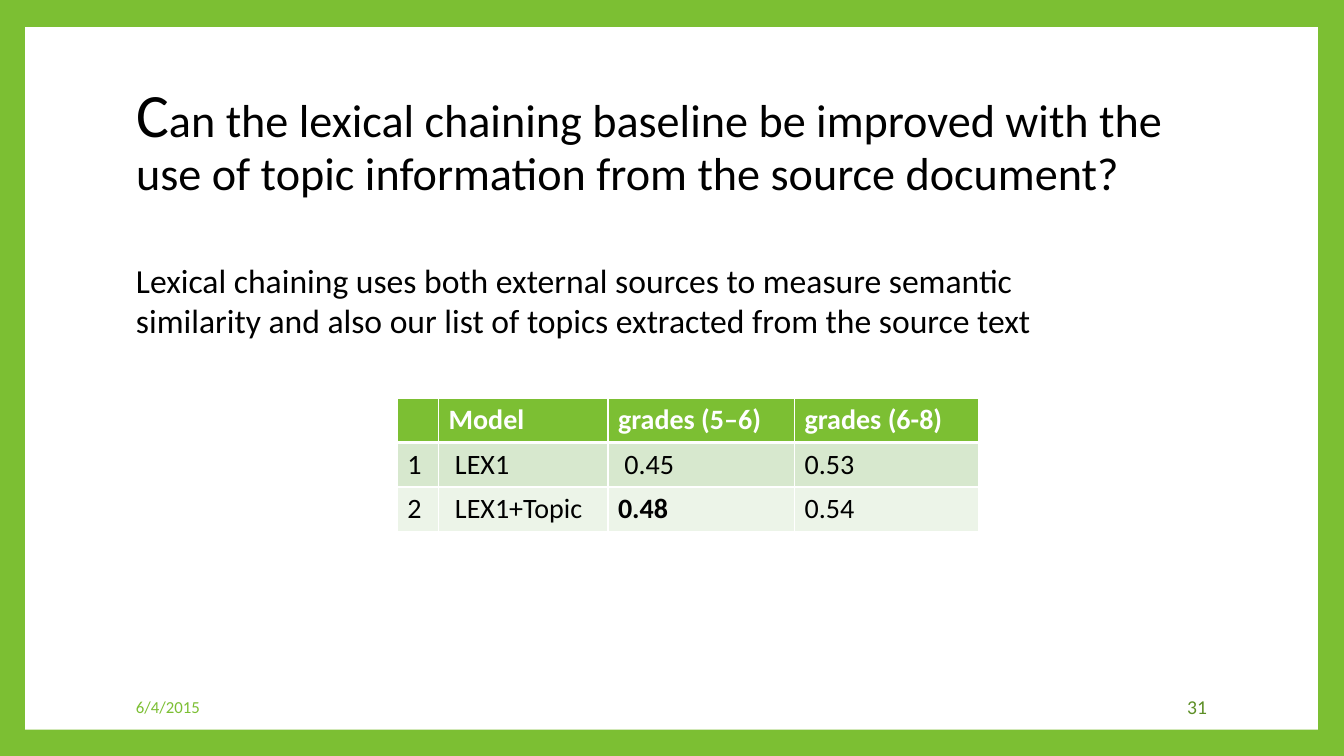
from lxml import etree
from pptx import Presentation
from pptx import util as u
from pptx.dml.color import RGBColor
from pptx.enum import shapes, text
from pptx.oxml import ns

PX = u.Inches(1) // 100

GREEN = RGBColor(0x7C, 0xBF, 0x33)
DARK_GREEN = RGBColor(0x5D, 0x8F, 0x26)
WHITE = RGBColor(0xFF, 0xFF, 0xFF)
BLACK = RGBColor(0, 0, 0)
ROW_FILLS = [GREEN, RGBColor(0xD7, 0xE8, 0xCE), RGBColor(0xEC, 0xF4, 0xE8)]

SCORES = [
    ["", "Model", "grades (5–6)", "grades (6-8)"],
    ["1", " LEX1", " 0.45", "0.53"],
    ["2", " LEX1+Topic", "0.48", "0.54"],
]
BEST_SCORE = "0.48"
COLUMN_WIDTHS = [41, 168, 185, 183]
ROW_HEIGHT = 43


def px(*lengths):
    return [length * PX for length in lengths]


def write(paragraph, words, size, color=BLACK, bold=False, align=text.PP_ALIGN.LEFT):
    paragraph.alignment = align
    run = paragraph.add_run()
    run.text = words
    run.font.name = "Calibri"
    run.font.size = u.Pt(size)
    run.font.bold = bold
    run.font.color.rgb = color


def add_text(slide, box, words, anchor=text.MSO_ANCHOR.MIDDLE, **look):
    frame = slide.shapes.add_textbox(*px(*box)).text_frame
    frame.word_wrap = True
    frame.vertical_anchor = anchor
    write(frame.paragraphs[0], words, **look)


def add_panel(slide):
    panel = slide.shapes.add_shape(shapes.MSO_SHAPE.RECTANGLE, *px(25, 27, 1282, 697))
    panel.shadow.inherit = False
    panel.fill.solid()
    panel.fill.fore_color.rgb = WHITE
    panel.line.fill.background()
    slide.shapes.title.element.addprevious(panel.element)


def set_title(slide):
    title = slide.shapes.title
    title.left, title.top, title.width, title.height = px(125, 67, 1080, 148)
    frame = title.text_frame
    frame.word_wrap = True
    frame.auto_size = text.MSO_AUTO_SIZE.NONE
    frame.vertical_anchor = text.MSO_ANCHOR.MIDDLE
    question = frame.paragraphs[0]
    question.line_spacing = 0.9
    write(question, "C", size=44)
    write(question, "an the lexical chaining baseline be improved with the use of "
          "topic information from the source document?", size=33)


def set_borders(cell, bottom):
    properties = cell._tc.get_or_add_tcPr()
    widths = {"a:lnL": 1, "a:lnR": 1, "a:lnT": 1, "a:lnB": bottom}
    for position, (side, width) in enumerate(widths.items()):
        line = etree.Element(ns.qn(side), w=str(u.Pt(width)))
        fill = etree.SubElement(line, ns.qn("a:solidFill"))
        etree.SubElement(fill, ns.qn("a:srgbClr"), val=str(WHITE))
        properties.insert(position, line)


def add_scores(slide):
    box = px(394, 395, sum(COLUMN_WIDTHS), ROW_HEIGHT * len(SCORES))
    scores = slide.shapes.add_table(len(SCORES), len(COLUMN_WIDTHS), *box).table
    for column, width in zip(scores.columns, COLUMN_WIDTHS):
        column.width = width * PX
    for r, row in enumerate(SCORES):
        heading = r == 0
        for c, words in enumerate(row):
            cell = scores.cell(r, c)
            cell.fill.solid()
            cell.fill.fore_color.rgb = ROW_FILLS[r]
            set_borders(cell, bottom=3 if heading else 1)
            if words:
                write(cell.text_frame.paragraphs[0], words, size=20,
                      color=WHITE if heading else BLACK,
                      bold=heading or words == BEST_SCORE)


def main():
    deck = Presentation()
    deck.slide_width, deck.slide_height = px(1333, 750)
    slide = deck.slides.add_slide(deck.slide_layouts[5])
    slide.background.fill.solid()
    slide.background.fill.fore_color.rgb = GREEN
    add_panel(slide)
    set_title(slide)
    add_scores(slide)
    add_text(slide, (125, 681, 255, 40), "6/4/2015", size=12, color=GREEN)
    add_text(slide, (1020, 681, 187, 40), "31", size=14, color=DARK_GREEN,
             align=text.PP_ALIGN.RIGHT)
    add_text(slide, (125, 253, 948, 91),
             "Lexical chaining uses both external sources to measure semantic "
             "similarity and also our list of topics extracted from the source text",
             anchor=text.MSO_ANCHOR.TOP, size=24)
    deck.save("out.pptx")


if __name__ == "__main__":
    main()
